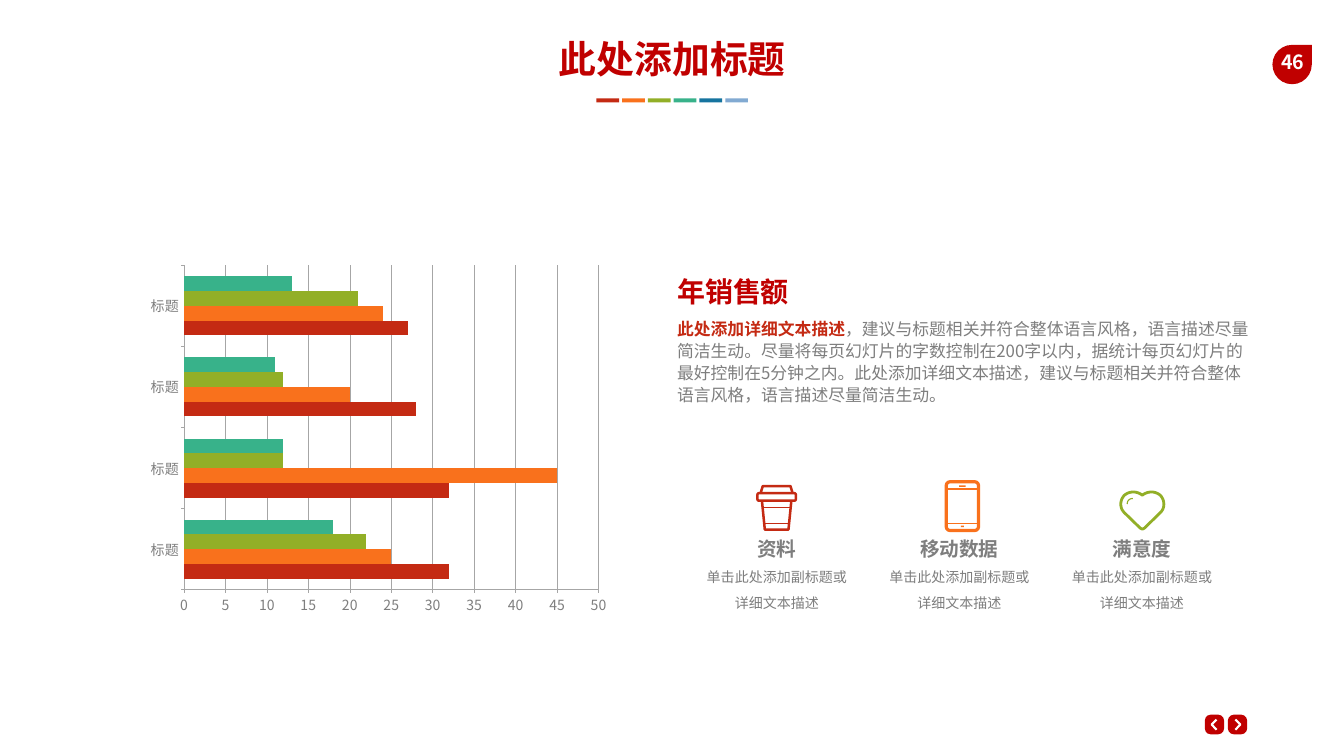
from typing import NamedTuple

from lxml.etree import SubElement
from pptx import Presentation
from pptx.chart.data import CategoryChartData
from pptx.dml.color import RGBColor
from pptx.enum.chart import XL_CHART_TYPE, XL_TICK_MARK
from pptx.enum.shapes import MSO_CONNECTOR, MSO_SHAPE
from pptx.enum.text import MSO_AUTO_SIZE, PP_ALIGN
from pptx.oxml.ns import qn
from pptx.util import Pt

FONT = "Noto Sans CJK SC"
WHITE = RGBColor(0xFF, 0xFF, 0xFF)
CRIMSON = RGBColor(0xC0, 0x00, 0x00)
RED = RGBColor(0xC4, 0x2A, 0x13)
ORANGE = RGBColor(0xF9, 0x71, 0x1C)
OLIVE = RGBColor(0x92, 0xAF, 0x27)
TEAL = RGBColor(0x38, 0xB2, 0x8A)
BLUE = RGBColor(0x16, 0x74, 0x9F)
SKY = RGBColor(0x82, 0xAA, 0xD2)
GREY = RGBColor(0x7E, 0x7E, 0x7E)
GRID_GREY = RGBColor(0xA6, 0xA6, 0xA6)

Point = tuple[float, float]


class Box(NamedTuple):
    left: float
    top: float
    width: float
    height: float

    def lengths(self) -> list[Pt]:
        return [Pt(value) for value in self]


class TextRun(NamedTuple):
    text: str
    size: float
    color: RGBColor
    bold: bool = False


class Feature(NamedTuple):
    title: str
    title_width: float


class Series(NamedTuple):
    name: str
    values: tuple[int, ...]
    color: RGBColor


FEATURES = [Feature("资料", 85.7), Feature("移动数据", 141.8), Feature("满意度", 113.8)]
FEATURE_CENTER, FEATURE_STEP = 1109.5, 260.7
SERIES = [
    Series("Series 1", (32, 32, 28, 27), RED),
    Series("Series 2", (25, 45, 20, 24), ORANGE),
    Series("Series 3", (22, 12, 12, 21), OLIVE),
    Series("Series 4", (18, 12, 11, 13), TEAL),
]


def add_text(slide, box: Box, runs: list[TextRun], align=PP_ALIGN.LEFT,
             spacing: float = 1.0, wrap: bool = True, side_inset: float = 14.4) -> None:
    frame = slide.shapes.add_textbox(*box.lengths()).text_frame
    frame.word_wrap = wrap
    frame.auto_size = MSO_AUTO_SIZE.SHAPE_TO_FIT_TEXT
    frame.margin_left = frame.margin_right = Pt(side_inset)
    frame.margin_top = frame.margin_bottom = Pt(side_inset / 2)
    paragraph = frame.paragraphs[0]
    paragraph.alignment = align
    paragraph.line_spacing = spacing
    for part in runs:
        run = paragraph.add_run()
        run.text = part.text
        run.font.size = Pt(part.size)
        run.font.bold = part.bold
        run.font.color.rgb = part.color
        run.font.name = FONT
        SubElement(run._r.get_or_add_rPr(), qn("a:ea"), typeface=FONT)


def add_filled(slide, kind, box: Box, color: RGBColor):
    shape = slide.shapes.add_shape(kind, *box.lengths())
    shape.shadow.inherit = False
    shape.fill.solid()
    shape.fill.fore_color.rgb = color
    shape.line.fill.background()
    return shape


def stroke(shape, color: RGBColor, weight: float) -> None:
    shape.shadow.inherit = False
    shape.fill.background()
    shape.line.color.rgb = color
    shape.line.width = Pt(weight)


def add_outlined_round(slide, box: Box, radius: float, color: RGBColor, weight: float) -> None:
    shape = slide.shapes.add_shape(MSO_SHAPE.ROUNDED_RECTANGLE, *box.lengths())
    shape.adjustments[0] = radius
    stroke(shape, color, weight)


def add_polyline(slide, points: list[Point], color: RGBColor, weight: float,
                 close: bool = False) -> None:
    vertices = [(Pt(x), Pt(y)) for x, y in points]
    builder = slide.shapes.build_freeform(*vertices[0])
    builder.add_line_segments(vertices[1:], close=close)
    stroke(builder.convert_to_shape(), color, weight)


def add_rule(slide, center: float, half: float, y: float, color: RGBColor) -> None:
    """Thin horizontal line, centred on an icon."""
    rule = slide.shapes.add_connector(
        MSO_CONNECTOR.STRAIGHT, Pt(center - half), Pt(y), Pt(center + half), Pt(y))
    rule.line.color.rgb = color
    rule.line.width = Pt(2.2)
    SubElement(rule.element.spPr, qn("a:effectLst"))


def bezier(a: Point, b: Point, c: Point, d: Point, steps: int = 12) -> list[Point]:
    """Points along a cubic curve."""
    points = []
    for step in range(steps + 1):
        t = step / steps
        weights = ((1 - t) ** 3, 3 * t * (1 - t) ** 2, 3 * t * t * (1 - t), t ** 3)
        points.append(tuple(sum(w * p[axis] for w, p in zip(weights, (a, b, c, d)))
                            for axis in (0, 1)))
    return points


def draw_cup(slide, center: float) -> None:
    lid = [(-22.7, 704), (-19.8, 694.4), (19.8, 694.4), (22.7, 704)]
    body = [(-20.9, 716.4), (-16.9, 756.7), (16.9, 756.7), (20.9, 716.4)]
    for outline in (lid, body):
        add_polyline(slide, [(center + x, y) for x, y in outline], RED, 3.6)
    add_outlined_round(slide, Box(center - 27.4, 704.5, 54.8, 10.8), 0.2, RED, 3.6)
    add_rule(slide, center, 18.5, 724.7, RED)
    add_rule(slide, center, 16.5, 747.7, RED)


def draw_phone(slide, center: float) -> None:
    add_outlined_round(slide, Box(center - 23, 688.3, 46, 69.5), 0.11, ORANGE, 4.6)
    for y in (698.8, 747.7):
        add_rule(slide, center, 21, y, ORANGE)
    for width, top in ((9.4, 693.4), (4.4, 751)):
        add_filled(slide, MSO_SHAPE.ROUNDED_RECTANGLE,
                   Box(center - width / 2, top, width, 2.2), ORANGE)


def draw_heart(slide, center: float) -> None:
    left_half = bezier((0, 707.4), (-7.9, 701.3), (-18.7, 701.3), (-25.9, 707.8))
    left_half += bezier((-25.9, 707.8), (-32.4, 715), (-32.4, 725.8), (-25.9, 732.2))
    left_half += [(-2.9, 754.6), (0, 756)]
    right_half = [(-x, y) for x, y in reversed(left_half[1:-1])]
    add_polyline(slide, [(center + x, y) for x, y in left_half + right_half], OLIVE, 4, True)
    glint = bezier((-21.6, 720), (-21.6, 715), (-18, 712.1), (-13.7, 712.1))
    add_polyline(slide, [(center + x, y) for x, y in glint], OLIVE, 1.6)


def draw_chart(slide) -> None:
    data = CategoryChartData()
    data.categories = ["标题"] * 4
    for series in SERIES:
        data.add_series(series.name, series.values)
    chart = slide.shapes.add_chart(
        XL_CHART_TYPE.BAR_CLUSTERED, *Box(201.6, 368.6, 678.2, 520.6).lengths(), data).chart
    chart.has_title = chart.has_legend = False
    chart.font.size = Pt(20)
    chart.font.color.rgb = GREY
    chart.font.name = FONT
    for properties in chart.element.iter(qn("a:defRPr")):
        SubElement(properties, qn("a:ea"), typeface=FONT)
    plot = chart.plots[0]
    plot.gap_width, plot.overlap, plot.vary_by_categories = 150, 0, False
    for drawn, series in zip(plot.series, SERIES):
        drawn.format.fill.solid()
        drawn.format.fill.fore_color.rgb = series.color
    value_axis = chart.value_axis
    value_axis.minimum_scale, value_axis.maximum_scale, value_axis.major_unit = 0, 50, 5
    value_axis.has_major_gridlines = True
    for axis in (chart.category_axis, value_axis):
        axis.major_tick_mark = XL_TICK_MARK.OUTSIDE
        axis.format.line.color.rgb = GRID_GREY
    value_axis.major_gridlines.format.line.color.rgb = GRID_GREY


def main() -> None:
    presentation = Presentation()
    presentation.slide_width, presentation.slide_height = Pt(1919.52), Pt(1080)
    slide = presentation.slides.add_slide(presentation.slide_layouts[6])

    for center, direction in ((1734.5, -1), (1767.4, 1)):
        button = add_filled(slide, MSO_SHAPE.ROUNDED_RECTANGLE,
                            Box(center - 13.7, 1021, 27.4, 28), CRIMSON)
        button.adjustments[0] = 0.3
        chevron = [(-3 * direction, 1028), (4 * direction, 1035), (-3 * direction, 1042.5)]
        add_polyline(slide, [(center + x, y) for x, y in chevron], WHITE, 3)

    add_filled(slide, MSO_SHAPE.TEAR, Box(1817.3, 64.1, 56.2, 56.2), CRIMSON)
    add_text(slide, Box(1811.5, 64.8, 69.8, 48.2), [TextRun("46", 28, WHITE, True)],
             PP_ALIGN.CENTER, wrap=False)
    add_text(slide, Box(607, 46.8, 706.3, 72.7), [TextRun("此处添加标题", 54, CRIMSON, True)],
             PP_ALIGN.CENTER, side_inset=7.2)
    for index, color in enumerate((RED, ORANGE, OLIVE, TEAL, BLUE, SKY)):
        add_filled(slide, MSO_SHAPE.RECTANGLE, Box(851.8 + 36.8 * index, 140.4, 32.4, 5.8), color)

    draw_chart(slide)
    add_text(slide, Box(952.6, 384.5, 911.5, 63.4), [TextRun("年销售额", 40, CRIMSON, True)])
    add_text(slide, Box(952.6, 445, 853.2, 142.6), [
        TextRun("此处添加详细文本描述", 24, RED, True),
        TextRun("，建议与标题相关并符合整体语言风格，语言描述尽量简洁生动。尽量将每页幻灯片的字数控制在"
                "200字以内，据统计每页幻灯片的最好控制在5分钟之内。此处添加详细文本描述，"
                "建议与标题相关并符合整体语言风格，语言描述尽量简洁生动。", 24, GREY),
    ], spacing=1.1)

    for index, feature in enumerate(FEATURES):
        center = FEATURE_CENTER + FEATURE_STEP * index
        add_text(slide, Box(center - 120.2, 793.4, 240.5, 87.1),
                 [TextRun("单击此处添加副标题或详细文本描述", 20, GREY)], PP_ALIGN.CENTER, 1.5)
        add_text(slide, Box(center - feature.title_width / 2, 760.3, feature.title_width, 48.2),
                 [TextRun(feature.title, 28, GREY, True)], PP_ALIGN.CENTER, wrap=False)
    draw_cup(slide, 1109.2)
    draw_phone(slide, 1374.5)
    draw_heart(slide, 1631.5)

    presentation.save("out.pptx")


if __name__ == "__main__":
    main()
